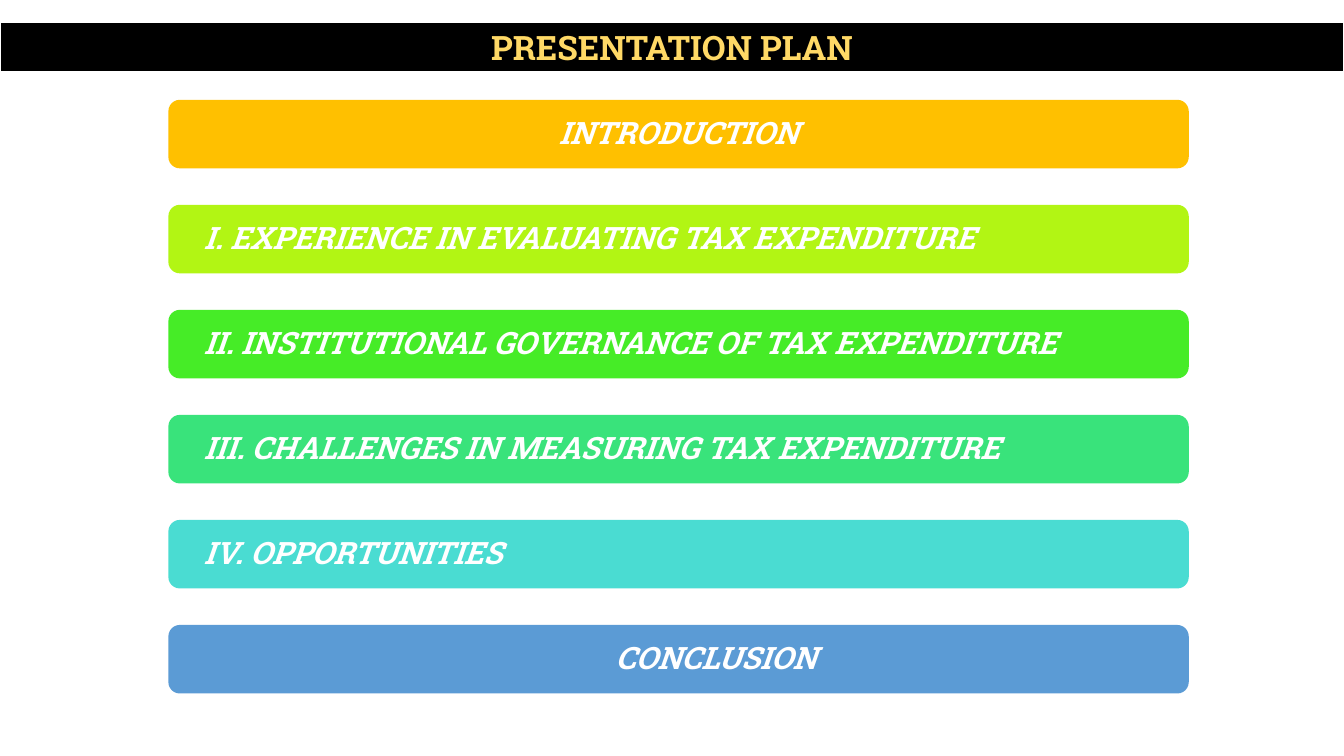
from dataclasses import dataclass

from pptx import Presentation
from pptx.dml.color import RGBColor
from pptx.enum.shapes import MSO_SHAPE
from pptx.enum.text import MSO_ANCHOR, MSO_AUTO_SIZE, PP_ALIGN
from pptx.util import Inches, Pt

ROUNDED = MSO_SHAPE.ROUNDED_RECTANGLE
MIDDLE = MSO_ANCHOR.MIDDLE
NO_AUTOFIT = MSO_AUTO_SIZE.NONE
LEFT, CENTER = PP_ALIGN.LEFT, PP_ALIGN.CENTER

FONT = "Roboto Slab"
WHITE = "FFFFFF"
PAGE_WIDTH, PAGE_HEIGHT = 13.33, 7.5
TITLE_ONLY_LAYOUT = 5

# One column of bars at an equal pitch
BAR_LEFT, BAR_WIDTH, BAR_HEIGHT = 1.67, 10.12, 0.68
FIRST_BAR_TOP, BAR_PITCH = 0.99, 1.042


@dataclass(frozen=True)
class Section:
    text: str
    fill: str
    align: PP_ALIGN = LEFT
    left_inset: float = 0.32
    right_inset: float = 0.32


SECTIONS = [
    Section("INTRODUCTION", "FFC000", CENTER),
    Section("I. EXPERIENCE IN EVALUATING TAX EXPENDITURE", "B2F514"),
    Section("II. INSTITUTIONAL GOVERNANCE OF TAX EXPENDITURE", "46EC27"),
    Section("III. CHALLENGES IN MEASURING TAX EXPENDITURE", "39E37B"),
    Section("IV. OPPORTUNITIES", "4ADCD2"),
    Section("CONCLUSION", "5B9BD5", CENTER, left_inset=0.84, right_inset=0.1),
]


def color(value: str) -> RGBColor:
    return RGBColor.from_string(value)


def paint(box, fill: str) -> None:
    box.fill.solid()
    box.fill.fore_color.rgb = color(fill)


def write(box, text: str, *, size: float, ink: str, align: PP_ALIGN,
          italic: bool = False, spacing: float = 1.0,
          left_inset: float = 0, right_inset: float = 0) -> None:
    frame = box.text_frame
    frame.word_wrap = True
    frame.auto_size = NO_AUTOFIT
    frame.vertical_anchor = MIDDLE
    frame.margin_left, frame.margin_right = Inches(left_inset), Inches(right_inset)
    frame.margin_top = frame.margin_bottom = 0
    para = frame.paragraphs[0]
    para.alignment = align
    para.line_spacing = spacing
    span = para.add_run()
    span.text = text
    span.font.name = FONT
    span.font.size = Pt(size)
    span.font.bold = True
    span.font.italic = italic
    span.font.color.rgb = color(ink)


def add_title(page, text: str) -> None:
    banner = page.shapes.title
    banner.left, banner.top = 0, Inches(0.22)
    banner.width, banner.height = Inches(PAGE_WIDTH), Inches(0.5)
    paint(banner, "000000")
    banner.line.color.rgb = color(WHITE)
    banner.line.width = Pt(1.5)
    write(banner, text, size=24, ink="FFD966", align=CENTER)


def add_section(page, row: int, section: Section) -> None:
    top = FIRST_BAR_TOP + row * BAR_PITCH
    bar = page.shapes.add_shape(ROUNDED, Inches(BAR_LEFT), Inches(top),
                                Inches(BAR_WIDTH), Inches(BAR_HEIGHT))
    bar.shadow.inherit = False
    paint(bar, section.fill)
    bar.line.fill.background()
    write(bar, section.text, size=22, ink=WHITE, align=section.align,
          italic=True, spacing=0.9, left_inset=section.left_inset,
          right_inset=section.right_inset)


def main() -> None:
    deck = Presentation()
    deck.slide_width, deck.slide_height = Inches(PAGE_WIDTH), Inches(PAGE_HEIGHT)
    page = deck.slides.add_slide(deck.slide_layouts[TITLE_ONLY_LAYOUT])

    # Title banner
    add_title(page, "PRESENTATION PLAN")

    # Agenda bars
    for row, section in enumerate(SECTIONS):
        add_section(page, row, section)

    deck.save("out.pptx")


if __name__ == "__main__":
    main()
